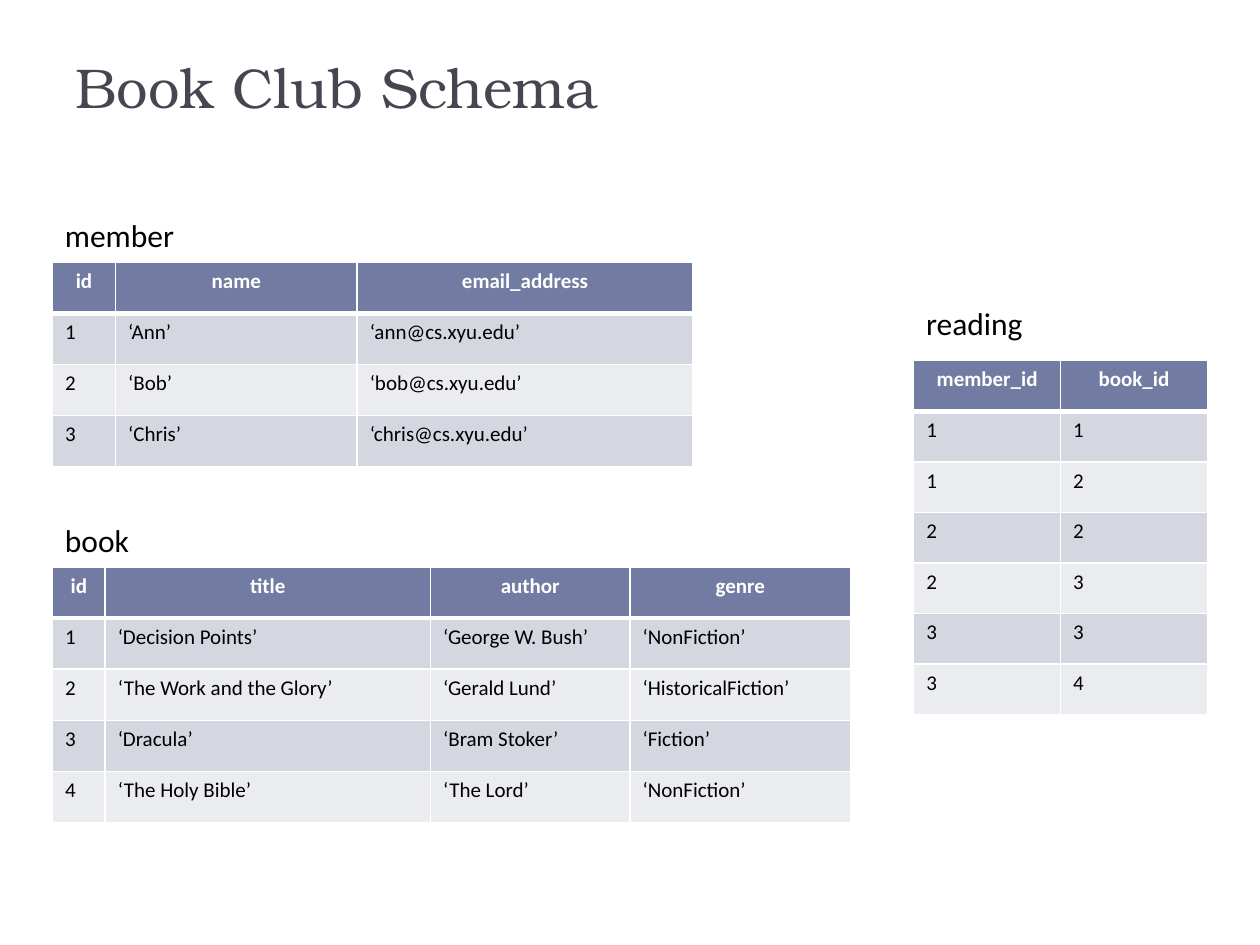
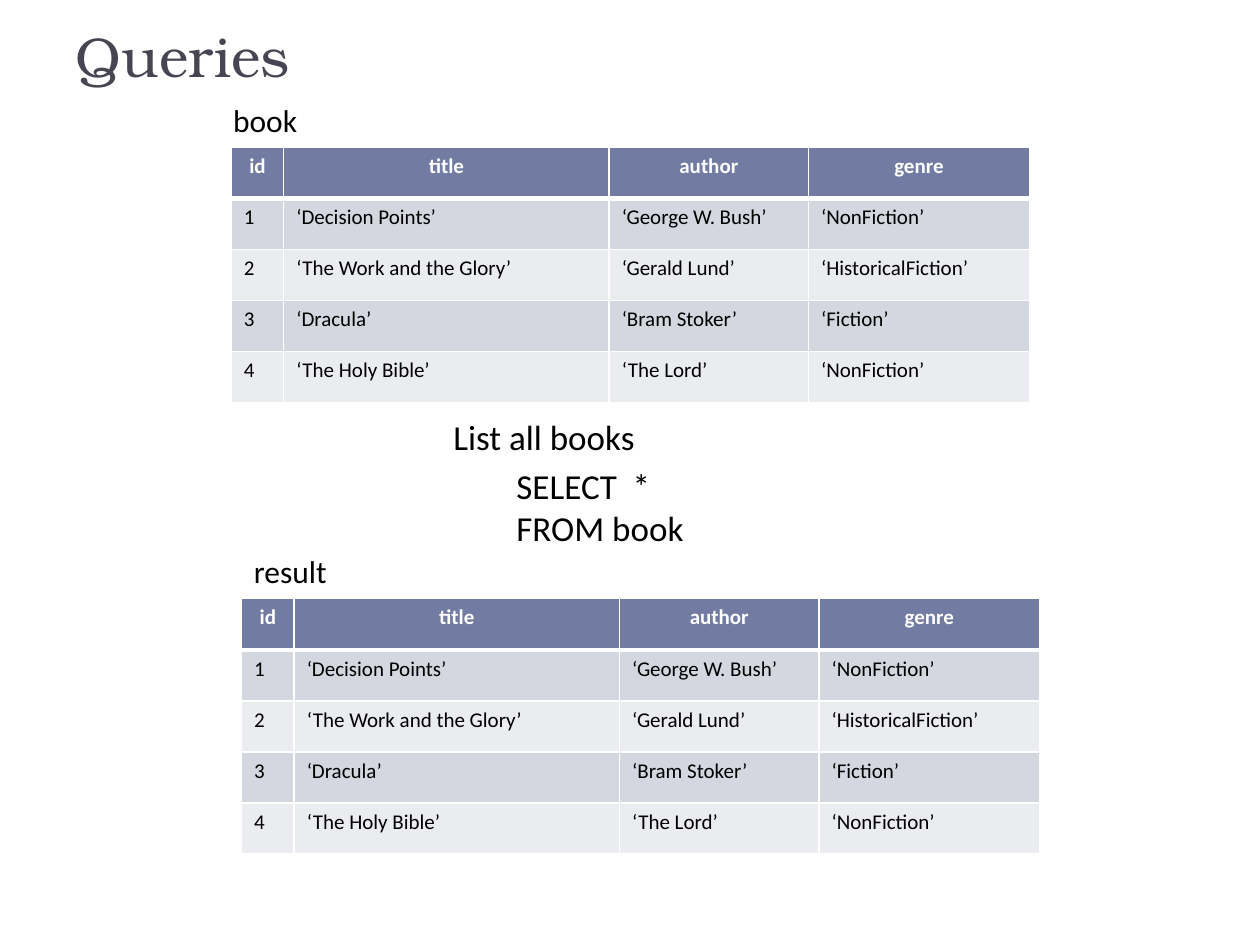
import lxml.etree
import pptx
import pptx.dml.color
import pptx.enum.text
import pptx.oxml.ns
import pptx.util

Cm, Pt = pptx.util.Cm, pptx.util.Pt
RGB = pptx.dml.color.RGBColor
ALIGN = pptx.enum.text.PP_ALIGN
ANCHOR = pptx.enum.text.MSO_ANCHOR
FIT = pptx.enum.text.MSO_AUTO_SIZE
qn = pptx.oxml.ns.qn

SLATE = RGB(0x46, 0x46, 0x53)
INDIGO = RGB(0x72, 0x7C, 0xA3)
BANDS = RGB(0xD5, 0xD7, 0xE0), RGB(0xEB, 0xEC, 0xF0)
WHITE = RGB(0xFF, 0xFF, 0xFF)
BLACK = RGB(0, 0, 0)

TITLE = {"name": "TeX Gyre Bonum", "size": Pt(32)}
LABEL = {"name": "Calibri", "size": Pt(18)}
QUERY = {"name": "Calibri", "size": Pt(20)}
HEAD = {"name": "Calibri", "size": Pt(12), "bold": True}
BODY = {"name": "Calibri", "size": Pt(12), "bold": False}

# Tables: column widths and row height in cm, then the rows.
MEMBER = {
    "cols": (1.27, 4.87, 6.77),
    "high": 1.03,
    "rows": [
        ("id", "name", "email_address"),
        ("1", "‘Ann’", "‘ann@cs.xyu.edu’"),
        ("2", "‘Bob’", "‘bob@cs.xyu.edu’"),
        ("3", "‘Chris’", "‘chris@cs.xyu.edu’"),
    ],
}
BOOK = {
    "cols": (1.06, 6.56, 4.02, 4.45),
    "high": 1.03,
    "rows": [
        ("id", "title", "author", "genre"),
        ("1", "‘Decision Points’", "‘George W. Bush’", "‘NonFiction’"),
        ("2", "‘The Work and the Glory’", "‘Gerald Lund’", "‘HistoricalFiction’"),
        ("3", "‘Dracula’", "‘Bram Stoker’", "‘Fiction’"),
        ("4", "‘The Holy Bible’", "‘The Lord’", "‘NonFiction’"),
    ],
}
READING = {
    "cols": (2.96, 2.96),
    "high": 1.02,
    "rows": [
        ("member_id", "book_id"),
        ("1", "1"),
        ("1", "2"),
        ("2", "2"),
        ("2", "3"),
        ("3", "3"),
        ("3", "4"),
    ],
}

# Slides: title with its top and height, tables at (left, top),
# texts at (left, top, width, height); all in cm.
SLIDES = [
    {
        "title": ("Book Club Schema", -0.2, 2.74),
        "tables": [
            (MEMBER, 1.06, 5.29),
            (BOOK, 1.06, 11.43),
            (READING, 18.42, 7.27),
        ],
        "texts": [
            ("member", LABEL, 1.06, 4.23, 2.87, 1.03),
            ("book", LABEL, 1.06, 10.37, 1.94, 1.03),
            ("reading", LABEL, 18.42, 6.0, 2.68, 1.03),
        ],
    },
    {
        "title": ("Queries", -1.27, 3.18),
        "tables": [(BOOK, 4.66, 2.97), (BOOK, 4.87, 12.07)],
        "texts": [
            ("book", LABEL, 4.45, 1.91, 1.94, 1.03),
            ("List all books", QUERY, 8.89, 8.26, 4.87, 1.11),
            ("SELECT  *\nFROM book", QUERY, 10.16, 9.24, 4.07, 1.96),
            ("result", LABEL, 4.87, 11.0, 2.14, 1.03),
        ],
    },
]


def write(frame, text, look, ink, align=ALIGN.LEFT):
    frame.text = text
    for para in frame.paragraphs:
        para.alignment = align
        font = para.runs[0].font
        for key, value in look.items():
            setattr(font, key, value)
        font.color.rgb = ink


def add_text(slide, text, look, ink, place, **form):
    frame = slide.shapes.add_textbox(*map(Cm, place)).text_frame
    for key, value in form.items():
        setattr(frame, key, value)
    write(frame, text, look, ink)


def edge(cell, row):
    """Draw white borders, thick between the header and the body."""
    thick = {0: "lnB", 1: "lnT"}.get(row)
    props = cell._tc.get_or_add_tcPr()
    for side in ("lnL", "lnR", "lnT", "lnB"):
        width = Pt(3 if side == thick else 1)
        line = lxml.etree.SubElement(props, qn("a:" + side), w=str(width))
        fill = lxml.etree.SubElement(line, qn("a:solidFill"))
        lxml.etree.SubElement(fill, qn("a:srgbClr"), val=str(WHITE))


def add_grid(slide, data, left, top):
    cols, high, rows = data["cols"], data["high"], data["rows"]
    size = sum(cols), high * len(rows)
    frame = slide.shapes.add_table(
        len(rows), len(cols), *map(Cm, (left, top, *size)))
    grid = frame.table
    for col, width in zip(grid.columns, cols):
        col.width = Cm(width)
    for r, row in enumerate(rows):
        grid.rows[r].height = Cm(high)
        for c, text in enumerate(row):
            cell = grid.cell(r, c)
            edge(cell, r)
            cell.fill.solid()
            if r == 0:
                cell.fill.fore_color.rgb = INDIGO
                write(cell.text_frame, text, HEAD, WHITE, ALIGN.CENTER)
            else:
                cell.fill.fore_color.rgb = BANDS[(r - 1) % 2]
                write(cell.text_frame, text, BODY, BLACK)


def main():
    deck = pptx.Presentation()
    deck.slide_width, deck.slide_height = Cm(25.4), Cm(19.05)
    for page in SLIDES:
        slide = deck.slides.add_slide(deck.slide_layouts[6])
        name, top, high = page["title"]
        add_text(slide, name, TITLE, SLATE, (1.27, top, 22.86, high),
                 word_wrap=True, vertical_anchor=ANCHOR.BOTTOM)
        for data, left, top in page["tables"]:
            add_grid(slide, data, left, top)
        for text, look, *place in page["texts"]:
            add_text(slide, text, look, BLACK, place,
                     word_wrap=False, auto_size=FIT.SHAPE_TO_FIT_TEXT)
    deck.save("out.pptx")


if __name__ == "__main__":
    main()
